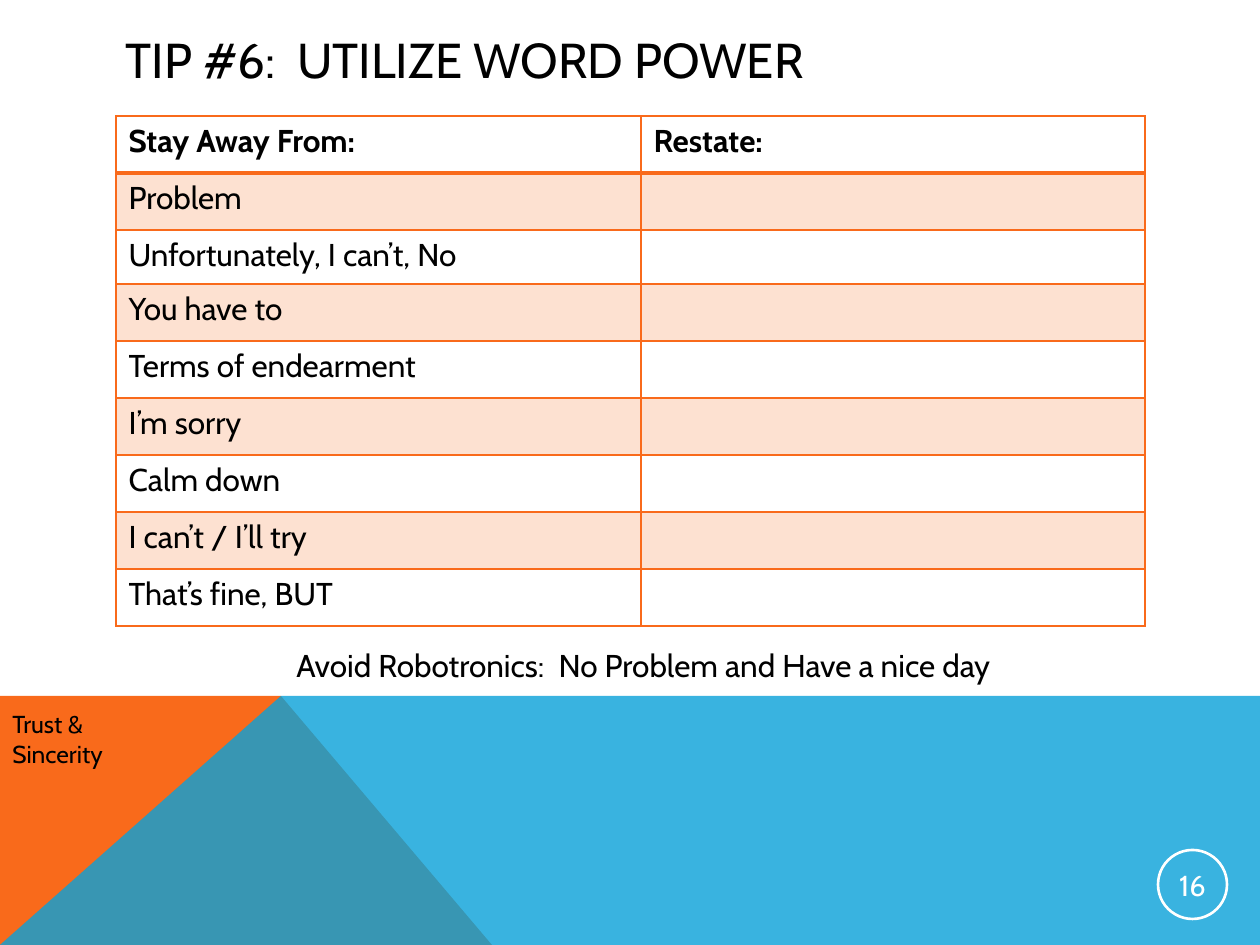
from dataclasses import dataclass

from lxml.etree import SubElement
from pptx import Presentation
from pptx.dml.color import RGBColor
from pptx.enum.shapes import MSO_SHAPE as Shape
from pptx.enum.text import MSO_ANCHOR as Anchor, PP_ALIGN as Align
from pptx.oxml.ns import qn
from pptx.util import Emu, Pt

EMU_PER_PX = 914400 / 126
PAGE_WIDTH, PAGE_HEIGHT = 1260, 945
BAND_TOP, PEAK = 696, 281
FONT = "Cabin"
BLACK, WHITE, ORANGE, BLUE = "000000", "FFFFFF", "F96A1B", "08A1D9"


@dataclass(frozen=True)
class Box:
    left: int
    top: int
    width: int
    height: int

    def emu(self) -> tuple[Emu, ...]:
        return tuple(px(n) for n in (self.left, self.top, self.width, self.height))


@dataclass(frozen=True)
class Panel:
    points: tuple[tuple[int, int], ...]
    color: str
    opacity: int = 100


@dataclass(frozen=True)
class Label:
    text: str
    box: Box
    size: float


PANELS = (
    Panel(((0, PAGE_HEIGHT), (0, BAND_TOP), (PEAK, BAND_TOP), (492, PAGE_HEIGHT)), ORANGE),
    Panel(((0, PAGE_HEIGHT), (PEAK, BAND_TOP), (PAGE_WIDTH, BAND_TOP),
           (PAGE_WIDTH, PAGE_HEIGHT)), BLUE, 80),
)
LABELS = (
    Label("Avoid Robotronics:  No Problem and Have a nice day", Box(284, 640, 724, 50), 18),
    Label("Trust & Sincerity", Box(0, 703, 189, 72), 14),
)
HEADERS = ("Stay Away From:", "Restate:")
PHRASES = ("Problem", "Unfortunately, I can’t, No", "You have to", "Terms of endearment",
           "I’m sorry", "Calm down", "I can’t / I’ll try", "That’s fine, BUT")
COLUMN_WIDTHS = (525, 504)
ROW_HEIGHTS = (57, 57, 54, 57, 57, 57, 57, 57, 57)


def px(length: int) -> Emu:
    return Emu(round(length * EMU_PER_PX))


def rgb(color: str) -> RGBColor:
    return RGBColor.from_string(color)


def fill_solid(target, color: str, opacity: int = 100) -> None:
    """Fill a shape or a cell; opacity is in percent."""
    target.fill.solid()
    target.fill.fore_color.rgb = rgb(color)
    if opacity < 100:
        owner = target._tc if hasattr(target, "_tc") else target._element
        tint = next(owner.iter(qn("a:srgbClr")) if not hasattr(target, "_tc")
                    else owner.tcPr.find(qn("a:solidFill")).iter(qn("a:srgbClr")))
        SubElement(tint, qn("a:alpha"), val=str(opacity * 1000))


def write(frame, text: str, *, size: float = 18, color: str = BLACK, bold: bool = False,
          align: Align = Align.LEFT) -> None:
    para = frame.paragraphs[0]
    para.alignment = align
    span = para.add_run()
    span.text = text
    span.font.name = FONT
    span.font.size = Pt(size)
    span.font.bold = bold
    span.font.color.rgb = rgb(color)


def draw_panel(page, panel: Panel) -> None:
    builder = page.shapes.build_freeform(*panel.points[0], scale=EMU_PER_PX)
    builder.add_line_segments(panel.points[1:], close=True)
    shape = builder.convert_to_shape()
    shape.shadow.inherit = False
    shape.line.fill.background()
    fill_solid(shape, panel.color, panel.opacity)


def draw_title(page, text: str) -> None:
    title = page.shapes.title
    title.left, title.top, title.width, title.height = Box(113, 21, 1036, 76).emu()
    title.text_frame.vertical_anchor = Anchor.MIDDLE
    write(title.text_frame, text, size=28)


def draw_label(page, label: Label) -> None:
    frame = page.shapes.add_textbox(*label.box.emu()).text_frame
    frame.word_wrap = True
    write(frame, label.text, size=label.size)


def set_border(cell, side: str, width: float) -> None:
    line = SubElement(cell._tc.get_or_add_tcPr(), qn(f"a:ln{side}"), w=str(Pt(width)))
    SubElement(SubElement(line, qn("a:solidFill")), qn("a:srgbClr"), val=ORANGE)


def draw_table(page) -> None:
    rows = [HEADERS] + [(phrase, "") for phrase in PHRASES]
    box = Box(116, 116, sum(COLUMN_WIDTHS), sum(ROW_HEIGHTS))
    table = page.shapes.add_table(len(rows), len(HEADERS), *box.emu()).table
    table.first_row = table.horz_banding = False
    for column, width in zip(table.columns, COLUMN_WIDTHS):
        column.width = px(width)
    for index, (row, height, texts) in enumerate(zip(table.rows, ROW_HEIGHTS, rows)):
        row.height = px(height)
        for cell, text in zip(row.cells, texts):
            for side in "LRTB":
                under_header = (index, side) in ((0, "B"), (1, "T"))
                set_border(cell, side, 2 if under_header else 1)
            if index % 2:
                fill_solid(cell, ORANGE, 20)
            else:
                cell.fill.background()
            if text:
                write(cell.text_frame, text, bold=index == 0)


def draw_page_number(page, number: int) -> None:
    badge = page.shapes.add_shape(Shape.OVAL, *Box(1158, 850, 69, 69).emu())
    badge.shadow.inherit = False
    badge.fill.background()
    badge.line.color.rgb = rgb(WHITE)
    badge.line.width = Pt(1.5)
    frame = badge.text_frame
    frame.vertical_anchor = Anchor.MIDDLE
    frame.margin_left = frame.margin_right = frame.margin_top = frame.margin_bottom = px(1)
    write(frame, str(number), size=16.5, color=WHITE, align=Align.CENTER)


def main() -> None:
    deck = Presentation()
    deck.slide_width, deck.slide_height = px(PAGE_WIDTH), px(PAGE_HEIGHT)
    page = deck.slides.add_slide(deck.slide_layouts[5])
    for panel in PANELS:
        draw_panel(page, panel)
    draw_title(page, "TIP #6:  UTILIZE WORD POWER")
    draw_table(page)
    draw_page_number(page, 16)
    for label in LABELS:
        draw_label(page, label)
    deck.save("out.pptx")


if __name__ == "__main__":
    main()
